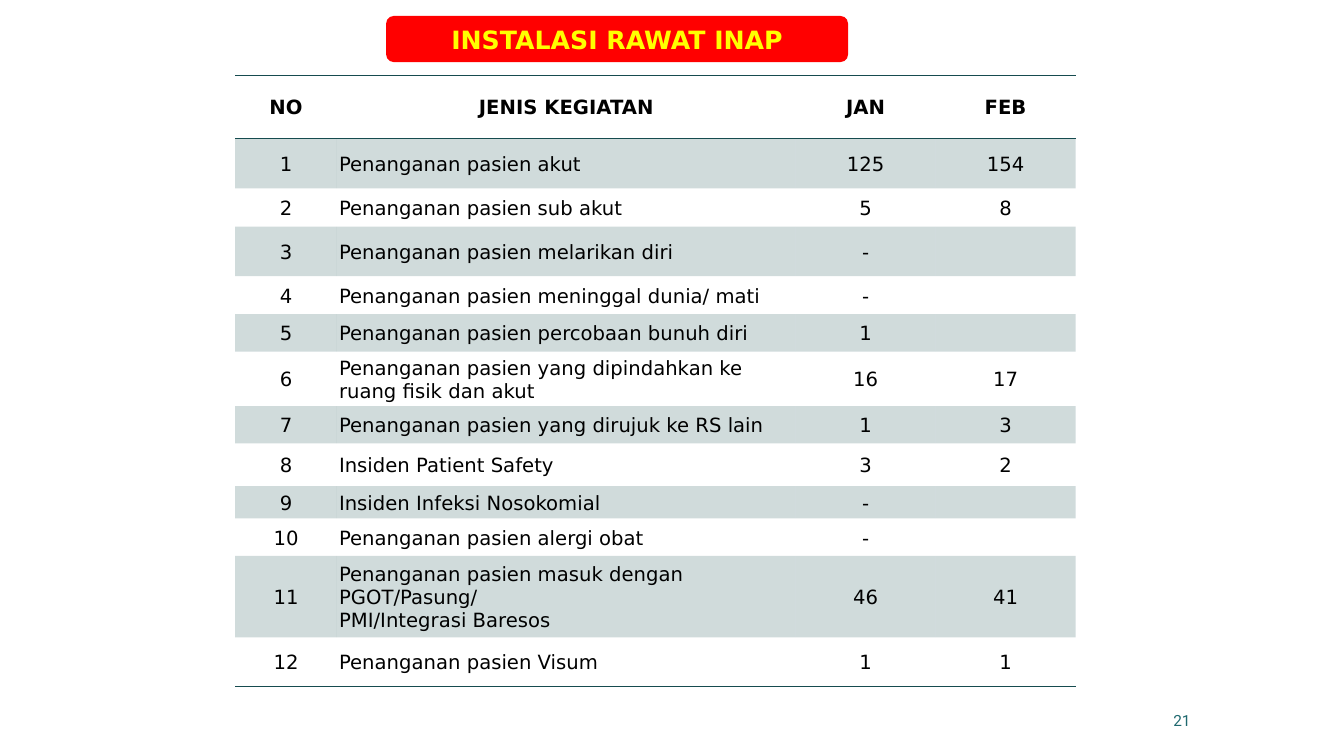
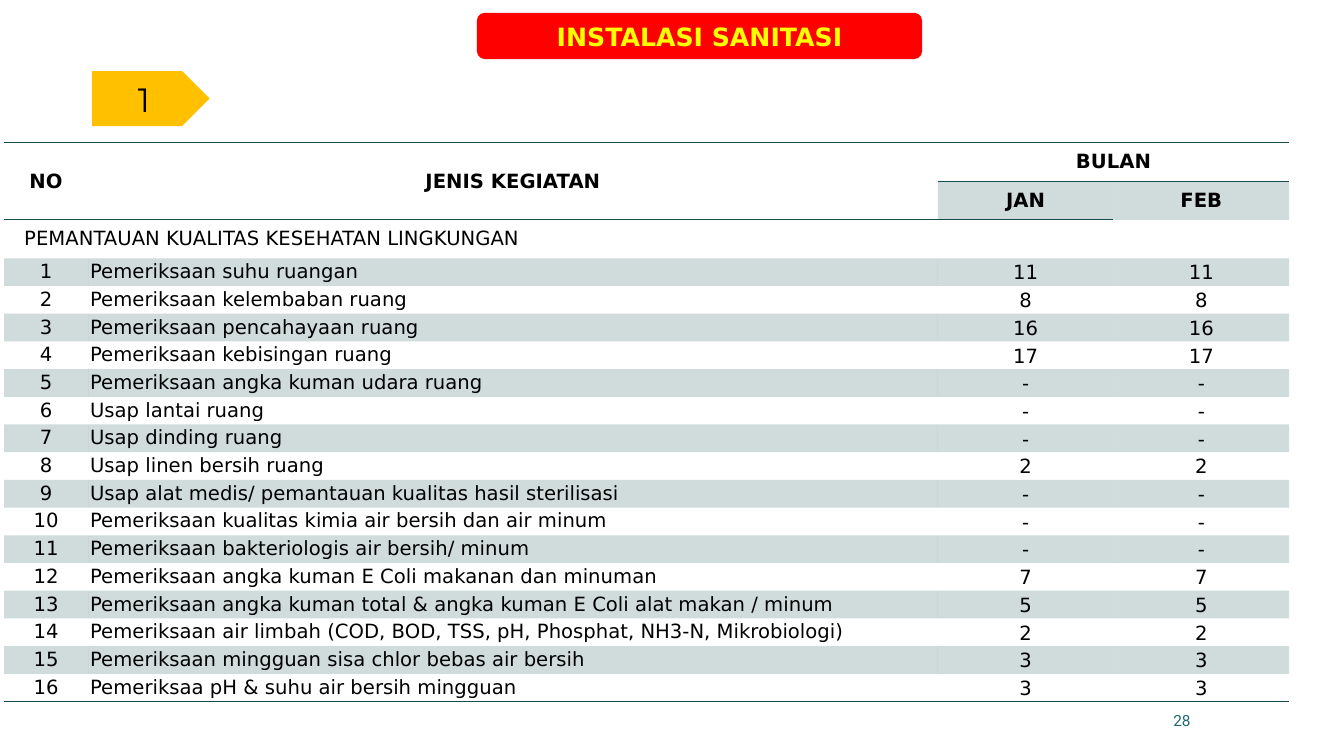
from lxml import etree
from pptx import Presentation
from pptx.dml.color import RGBColor
from pptx.enum.shapes import MSO_SHAPE as Shape
from pptx.enum.text import MSO_ANCHOR as Anchor, PP_ALIGN as Align
from pptx.oxml.ns import qn
from pptx.util import Pt

RED = RGBColor(0xFF, 0x00, 0x00)
YELLOW = RGBColor(0xFF, 0xFF, 0x00)
AMBER = RGBColor(0xFF, 0xC0, 0x00)
BLACK = RGBColor(0x00, 0x00, 0x00)
TEAL = RGBColor(0x16, 0x4B, 0x4F)
NUMBER_TEAL = RGBColor(0x1F, 0x69, 0x6F)

TEXT_FONT = "DejaVu Sans"
NUMBER_FONT = "Roboto"
TAG_FONT = "Montserrat"
PLAIN_TABLE = "{2D5ABB26-0587-4C30-8999-92F81FD0307C}"
TIGHT = (1.5, 1.5)
ROOMY = (14.4, 5)

INPATIENT_ROWS = [
    ("1", "Penanganan pasien akut", "125", "154"),
    ("2", "Penanganan pasien sub akut", "5", "8"),
    ("3", "Penanganan pasien melarikan diri", "-", ""),
    ("4", "Penanganan pasien meninggal dunia/ mati", "-", ""),
    ("5", "Penanganan pasien percobaan bunuh diri", "1", ""),
    ("6", "Penanganan pasien yang dipindahkan ke ruang fisik dan akut", "16", "17"),
    ("7", "Penanganan pasien yang dirujuk ke RS lain", "1", "3"),
    ("8", "Insiden Patient Safety", "3", "2"),
    ("9", "Insiden Infeksi Nosokomial", "-", ""),
    ("10", "Penanganan pasien alergi obat", "-", ""),
    ("11", "Penanganan pasien masuk dengan PGOT/Pasung/\nPMI/Integrasi Baresos", "46", "41"),
    ("12", "Penanganan pasien Visum", "1", "1"),
]
INPATIENT_HEIGHTS = [45, 35.6, 27.4, 35.4, 27.1, 26.8, 38.9, 26.6, 30.5, 23.2, 26.8, 58.2, 35]

# Each check was done equally often in both months.
SANITATION_CHECKS = [
    ("Pemeriksaan suhu ruangan", "11"),
    ("Pemeriksaan kelembaban ruang", "8"),
    ("Pemeriksaan pencahayaan ruang", "16"),
    ("Pemeriksaan kebisingan ruang", "17"),
    ("Pemeriksaan angka kuman udara ruang", "-"),
    ("Usap lantai ruang", "-"),
    ("Usap dinding ruang", "-"),
    ("Usap linen bersih ruang", "2"),
    ("Usap alat medis/ pemantauan kualitas hasil sterilisasi", "-"),
    ("Pemeriksaan kualitas kimia air bersih dan air minum", "-"),
    ("Pemeriksaan bakteriologis air bersih/ minum", "-"),
    ("Pemeriksaan angka kuman E Coli makanan dan minuman", "7"),
    ("Pemeriksaan angka kuman total & angka kuman E Coli alat makan / minum", "5"),
    ("Pemeriksaan air limbah (COD, BOD, TSS, pH, Phosphat, NH3-N, Mikrobiologi)", "2"),
    ("Pemeriksaan mingguan sisa chlor bebas air bersih", "3"),
    ("Pemeriksaa pH & suhu air bersih mingguan", "3"),
]


class ReportDeck:
    """Holds the shared style and the slide being filled."""

    def __init__(self):
        self.deck = Presentation()
        self.deck.slide_width, self.deck.slide_height = Pt(960), Pt(540)
        self.page = None

    def new_page(self, number):
        self.page = self.deck.slides.add_slide(self.deck.slide_layouts[6])
        box = self.page.shapes.add_textbox(Pt(633.6), Pt(500.4), Pt(224), Pt(28.8))
        box.text_frame.word_wrap = True
        box.text_frame.vertical_anchor = Anchor.MIDDLE
        self.set_text(box.text_frame, str(number), NUMBER_FONT, 11, NUMBER_TEAL,
                      align=Align.RIGHT)

    def set_text(self, frame, text, font, size, color, bold=False, align=Align.CENTER):
        para = frame.paragraphs[0]
        para.text = text
        para.alignment = align
        para.font.name, para.font.size, para.font.bold = font, Pt(size), bold
        para.font.color.rgb = color

    def label(self, kind, left, top, width, height, fill):
        """Add a borderless shape and return its text frame."""
        shape = self.page.shapes.add_shape(kind, Pt(left), Pt(top), Pt(width), Pt(height))
        shape.shadow.inherit = False
        shape.fill.solid()
        shape.fill.fore_color.rgb = fill
        shape.line.fill.background()
        shape.text_frame.vertical_anchor = Anchor.MIDDLE
        return shape.text_frame

    def title(self, text, left, top, width):
        frame = self.label(Shape.ROUNDED_RECTANGLE, left, top, width, 33, RED)
        self.set_text(frame, text, TEXT_FONT, 18, YELLOW, bold=True)

    def tag(self, text, left, top, width, height):
        frame = self.label(Shape.PENTAGON, left, top, width, height, AMBER)
        self.set_text(frame, text, TAG_FONT, 24, BLACK)

    def table(self, left, top, widths, heights):
        frame = self.page.shapes.add_table(len(heights), len(widths), Pt(left), Pt(top),
                                           Pt(sum(widths)), Pt(sum(heights)))
        table = frame.table
        table.first_row = table.horz_banding = False
        table._tbl.tblPr.find(qn("a:tableStyleId")).text = PLAIN_TABLE
        for column, width in zip(table.columns, widths):
            column.width = Pt(width)
        for row, height in zip(table.rows, heights):
            row.height = Pt(height)
        for cell in table.iter_cells():
            cell.fill.background()
        return table

    def cell(self, cell, text, bold=False, align=Align.CENTER, anchor=Anchor.MIDDLE, inset=TIGHT):
        side, top = inset
        cell.margin_left = cell.margin_right = Pt(side)
        cell.margin_top = Pt(top)
        cell.margin_bottom = Pt(0 if inset == TIGHT else top)
        cell.vertical_anchor = anchor
        self.set_text(cell.text_frame, text, TEXT_FONT, 14, BLACK, bold, align)

    def tint(self, cell):
        cell.fill.solid()
        cell.fill.fore_color.rgb = TEAL
        color = cell._tc.tcPr.find(f".//{qn('a:srgbClr')}")
        etree.SubElement(color, qn("a:alpha"), val="20000")

    def rule(self, cells, *edges):
        """Draw 1 pt lines on the given edges, named in the order lnT, lnB."""
        for cell in cells:
            for edge in reversed(edges):
                line = etree.Element(qn(f"a:{edge}"), w=str(Pt(1)))
                fill = etree.SubElement(line, qn("a:solidFill"))
                etree.SubElement(fill, qn("a:srgbClr"), val=str(TEAL))
                cell._tc.get_or_add_tcPr().insert(0, line)

    def body(self, table, first, rows, label_anchor=Anchor.MIDDLE):
        """Fill rows from index first on, tinting every other one, and close the table."""
        for index, values in enumerate(rows):
            for column, text in enumerate(values):
                cell = table.cell(first + index, column)
                self.cell(cell, text, align=Align.LEFT if column == 1 else Align.CENTER,
                          anchor=label_anchor if column < 2 else Anchor.MIDDLE)
                if index % 2 == 0:
                    self.tint(cell)
        self.rule(table.rows[len(table.rows) - 1].cells, "lnB")


def inpatient_page(report):
    report.new_page(21)
    report.title("INSTALASI RAWAT INAP", 275.8, 11.4, 330)
    table = report.table(168, 54, [72.7, 327.6, 100, 100], INPATIENT_HEIGHTS)
    header = table.rows[0].cells
    for cell, text in zip(header, ("NO", "JENIS KEGIATAN", "JAN", "FEB")):
        report.cell(cell, text, bold=True)
    report.rule(header, "lnT", "lnB")
    report.body(table, 1, INPATIENT_ROWS)


def sanitation_page(report):
    report.new_page(28)
    header_heights = [27.5] * 3
    check_heights = [19.8] * len(SANITATION_CHECKS)
    table = report.table(2.9, 102, [60, 607, 125.5, 125.5], header_heights + check_heights)
    for start, end in (((0, 0), (1, 0)), ((0, 1), (1, 1)), ((0, 2), (0, 3)), ((2, 0), (2, 2))):
        table.cell(*start).merge(table.cell(*end))
    headings = {(0, 0): "NO", (0, 1): "JENIS KEGIATAN", (0, 2): "BULAN",
                (1, 2): "JAN", (1, 3): "FEB"}
    for place, text in headings.items():
        report.cell(table.cell(*place), text, bold=True, inset=ROOMY)
    for column in (2, 3):
        report.tint(table.cell(1, column))
    report.rule(table.rows[0].cells, "lnT", "lnB")
    report.rule([table.cell(1, column) for column in range(3)], "lnB")
    report.cell(table.cell(2, 0), "PEMANTAUAN KUALITAS KESEHATAN LINGKUNGAN",
                align=Align.LEFT, inset=ROOMY)
    report.cell(table.cell(2, 3), "")
    rows = [(str(number), name, count, count)
            for number, (name, count) in enumerate(SANITATION_CHECKS, 1)]
    report.body(table, 3, rows, label_anchor=Anchor.TOP)
    report.title("INSTALASI SANITASI", 340.7, 9.2, 318)
    report.tag("1", 65.8, 50.8, 84, 39.2)


def main():
    report = ReportDeck()
    inpatient_page(report)
    sanitation_page(report)
    report.deck.save("out.pptx")


if __name__ == "__main__":
    main()
